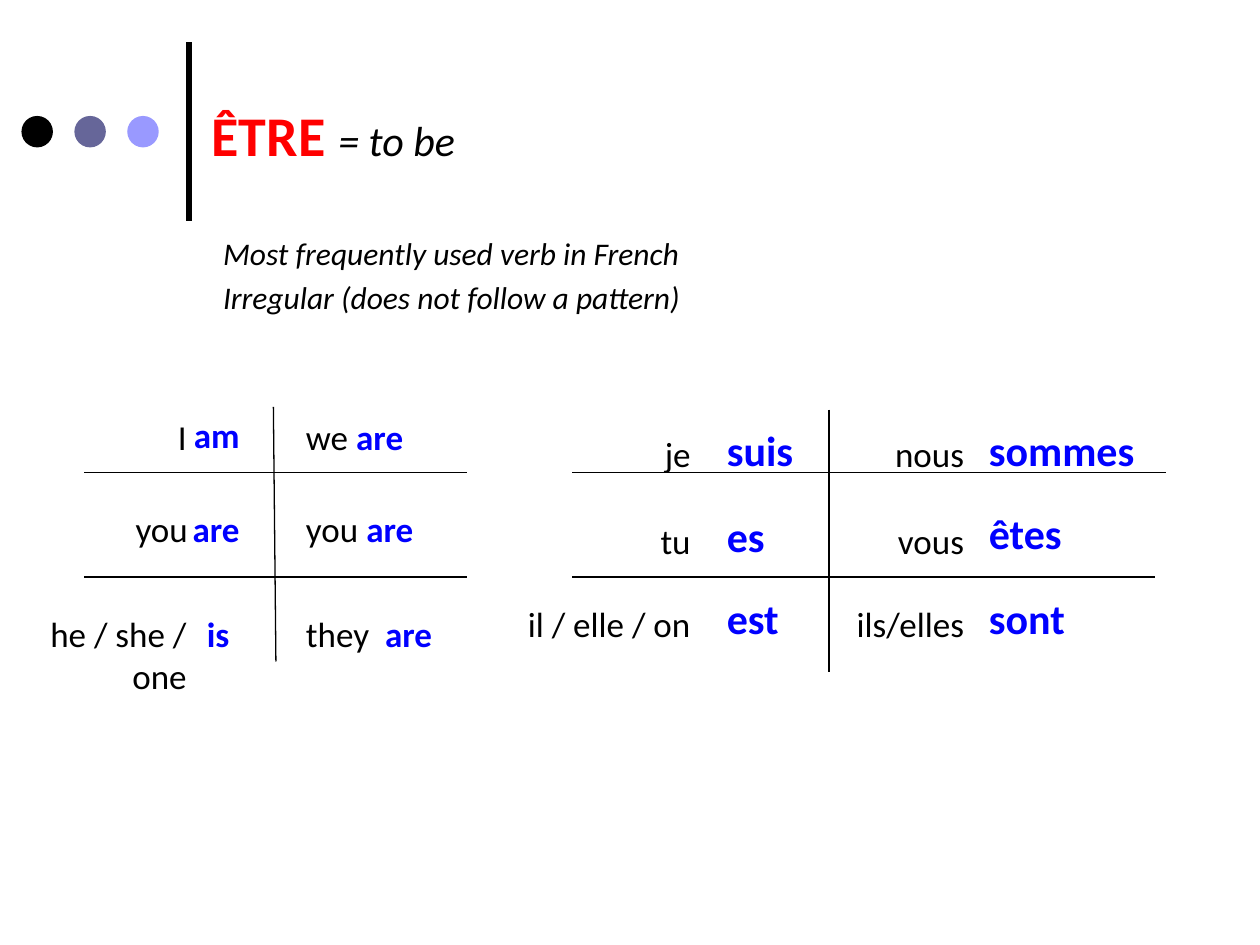
"""Build a slide that conjugates the French verb être beside its English forms."""
from lxml import etree
from pptx import Presentation
from pptx.dml.color import RGBColor
from pptx.enum.shapes import MSO_CONNECTOR, MSO_SHAPE
from pptx.enum.text import MSO_ANCHOR, MSO_AUTO_SIZE, PP_ALIGN
from pptx.oxml.ns import qn
from pptx.util import Inches, Pt

STRAIGHT = MSO_CONNECTOR.STRAIGHT
OVAL = MSO_SHAPE.OVAL
TOP = MSO_ANCHOR.TOP
NO_FIT = MSO_AUTO_SIZE.NONE
LEFT, RIGHT = PP_ALIGN.LEFT, PP_ALIGN.RIGHT
BLACK, RED, BLUE = "000000", "FF0000", "0000FF"


def add_span(para, text, size=20, color=BLACK, bold=False, italic=False):
    """Add formatted text to a paragraph."""
    span = para.add_run()
    span.text = text
    span.font.name = "Calibri"
    span.font.size = Pt(size)
    span.font.bold = bold
    span.font.italic = italic
    span.font.color.rgb = RGBColor.from_string(color)


def place(box, left, top, width, height):
    """Position a text shape and return its first paragraph, left aligned."""
    box.left, box.top = Inches(left), Inches(top)
    box.width, box.height = Inches(width), Inches(height)
    frame = box.text_frame
    frame.word_wrap = True
    frame.auto_size = NO_FIT
    frame.vertical_anchor = TOP
    frame.paragraphs[0].alignment = LEFT
    return frame.paragraphs[0]


deck = Presentation()
deck.slide_width, deck.slide_height = Inches(10), Inches(7.5)
page = deck.slides.add_slide(deck.slide_layouts[1])

for index, color in enumerate((BLACK, "666699", "9999FF")):
    dot = page.shapes.add_shape(
        OVAL, Inches(0.17 + 0.42 * index), Inches(0.92), Inches(0.25), Inches(0.25)
    )
    dot.shadow.inherit = False
    dot.fill.solid()
    dot.fill.fore_color.rgb = RGBColor.from_string(color)
    dot.line.fill.background()

rules = [
    (1.5, 1.75, 1.5, 0.33, 3),
    (4.54, 3.75, 9.25, 3.75, 0.75),
    (4.54, 4.58, 9.17, 4.58, 0.75),
    (6.58, 3.25, 6.58, 5.33, 0.75),
    (0.67, 3.75, 3.71, 3.75, 0.75),
    (0.67, 4.58, 3.71, 4.58, 0.75),
    (2.17, 3.23, 2.19, 5.25, 0.75),
]
for x1, y1, x2, y2, weight in rules:
    rule = page.shapes.add_connector(STRAIGHT, Inches(x1), Inches(y1), Inches(x2), Inches(y2))
    rule.line.color.rgb = RGBColor.from_string(BLACK)
    rule.line.width = Pt(weight)
    etree.SubElement(rule.element.spPr, qn("a:effectLst"))

para = place(page.shapes.title, 1.58, 0.75, 6.25, 1.45)
add_span(para, "ÊTRE ", size=32, color=RED, bold=True)
add_span(para, "= to be", size=24, italic=True)

body = page.placeholders[1]
para = place(body, 1.67, 1.88, 6.25, 0.71)
body.text_frame.add_paragraph()
facts = ("Most frequently used verb in French", "Irregular (does not follow a pattern)")
for para, fact in zip(body.text_frame.paragraphs, facts):
    para.alignment = LEFT
    para.line_spacing = 0.75
    para.space_before = Pt(9)
    properties = para._p.get_or_add_pPr()
    properties.set("marL", "0")
    properties.set("indent", "0")
    etree.SubElement(properties, qn("a:buNone"))
    add_span(para, fact, size=18, italic=True)

pronouns = [
    ("I", 1.08, 3.25, 0.5, 0.43),
    ("you", 0.92, 3.98, 0.67, 0.43),
    ("he / she / one", 0, 4.81, 1.58, 0.77),
    ("je", 5, 3.38, 0.58, 0.43),
    ("tu", 4.83, 4.07, 0.75, 0.43),
    ("il / elle / on", 4.08, 4.73, 1.5, 0.43),
    ("nous", 6.67, 3.38, 1.08, 0.43),
    ("vous", 6.67, 4.07, 1.08, 0.43),
    ("ils/elles", 6.67, 4.73, 1.08, 0.43),
]
for text, *area in pronouns:
    para = place(page.shapes.add_textbox(0, 0, 0, 0), *area)
    para.alignment = RIGHT
    add_span(para, text)

english_verbs = [
    ("am", 1.08, 3.23, 0.92),
    ("are", 1.17, 3.98, 0.83),
    ("is", 1.25, 4.81, 0.67),
]
for text, *area in english_verbs:
    para = place(page.shapes.add_textbox(0, 0, 0, 0), *area, 0.43)
    para.alignment = RIGHT
    add_span(para, text, color=BLUE, bold=True)

english_plurals = [("we ", 3.25, 1.38), ("you ", 3.98, 1.38), ("they  ", 4.81, 1.67)]
for pronoun, top, width in english_plurals:
    para = place(page.shapes.add_textbox(0, 0, 0, 0), 2.33, top, width, 0.43)
    add_span(para, pronoun)
    add_span(para, "are", color=BLUE, bold=True)

french_verbs = [
    ("suis", 5.67, 3.32, 1.08),
    ("es", 5.67, 4, 1.08),
    ("est", 5.67, 4.65, 1.08),
    ("sommes", 7.75, 3.32, 1.5),
    ("êtes", 7.75, 3.98, 1.08),
    ("sont", 7.75, 4.65, 1.08),
]
for text, *area in french_verbs:
    para = place(page.shapes.add_textbox(0, 0, 0, 0), *area, 0.5)
    add_span(para, text, size=24, color=BLUE, bold=True)

deck.save("out.pptx")
